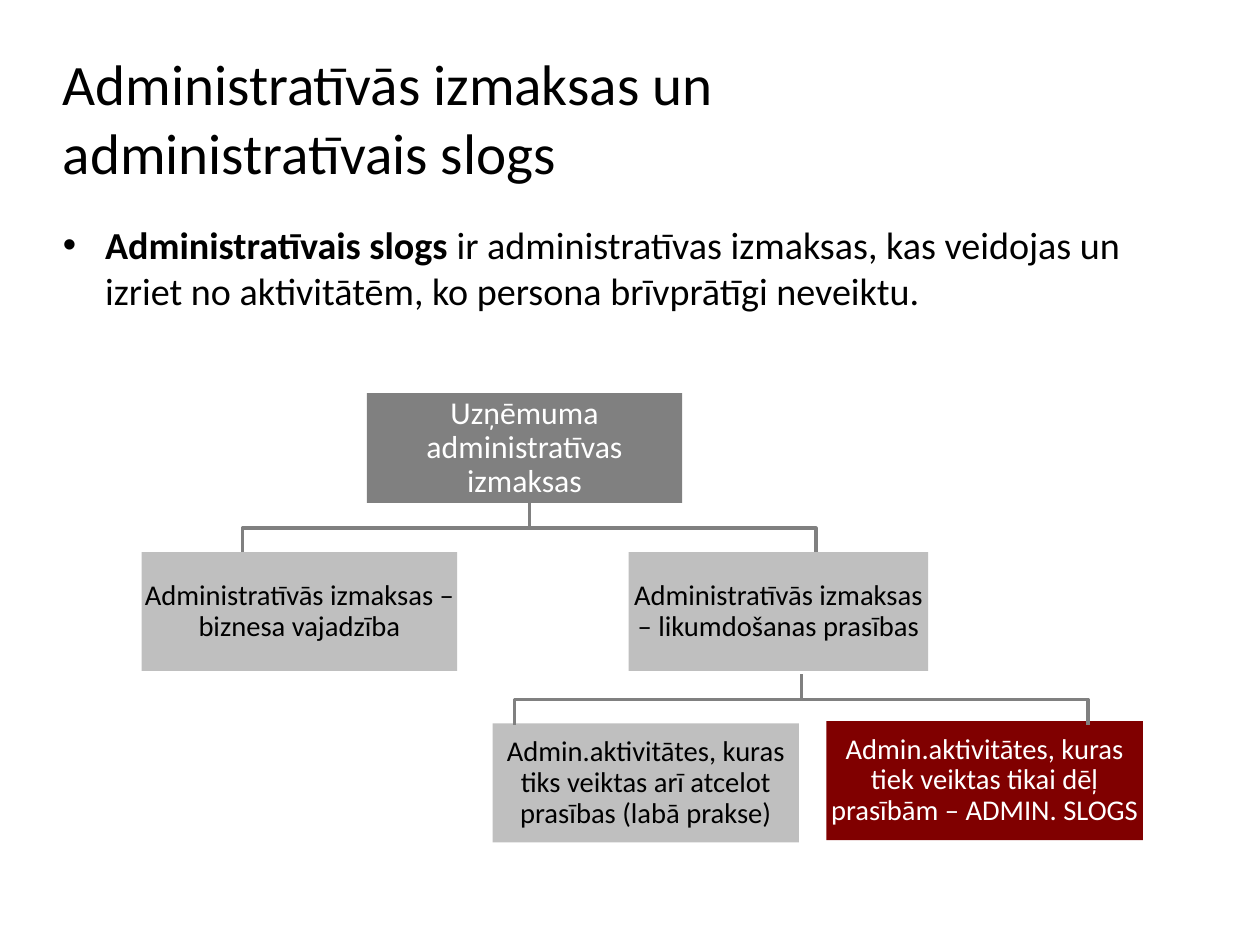
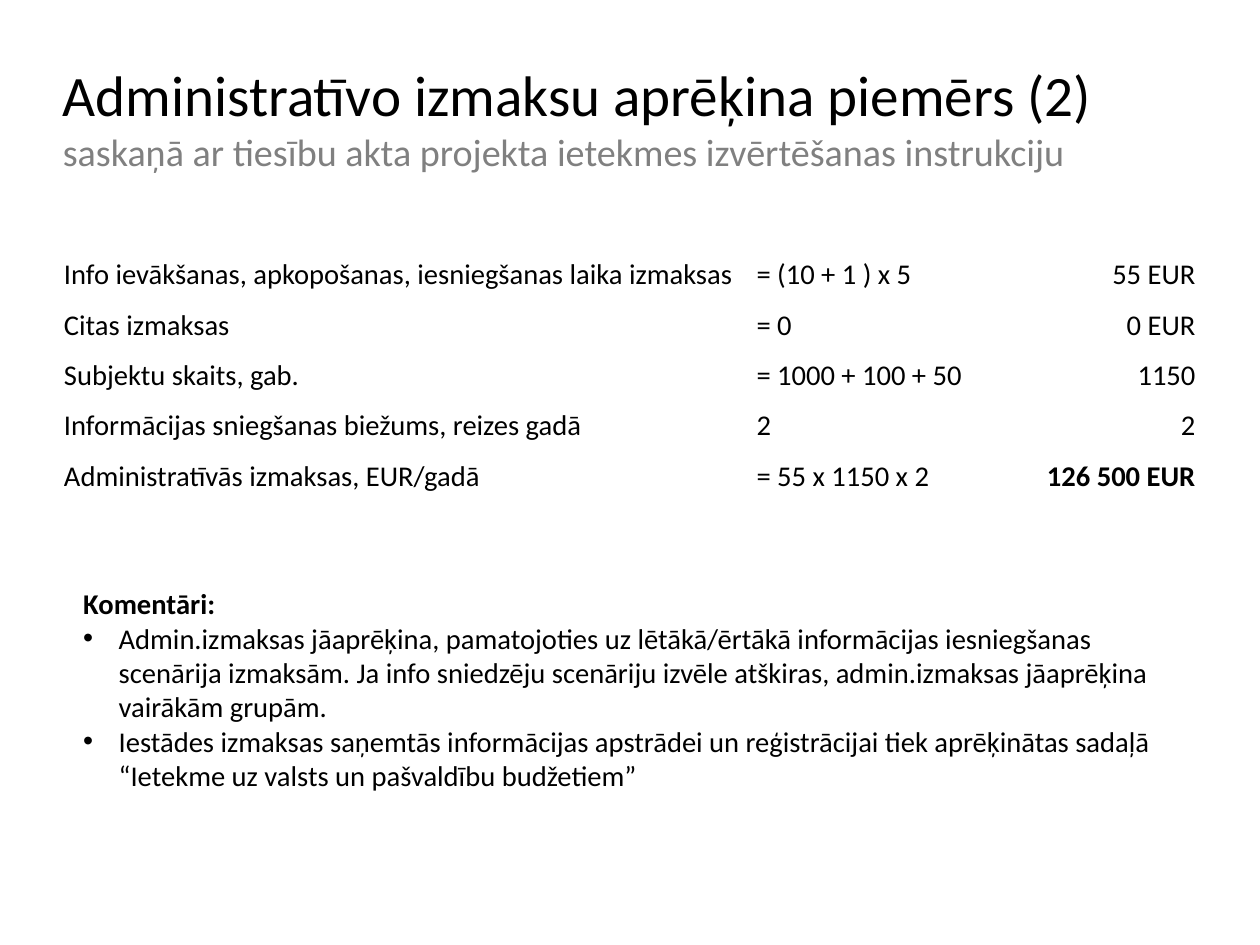
from dataclasses import dataclass

from lxml import etree
from pptx import Presentation
from pptx.dml.color import RGBColor
from pptx.enum.shapes import MSO_SHAPE
from pptx.enum.text import MSO_ANCHOR, PP_ALIGN
from pptx.oxml.ns import qn
from pptx.util import Inches, Pt

RECTANGLE = MSO_SHAPE.RECTANGLE
TOP, MIDDLE, BOTTOM = MSO_ANCHOR.TOP, MSO_ANCHOR.MIDDLE, MSO_ANCHOR.BOTTOM
LEFT, CENTER, RIGHT, JUSTIFY = PP_ALIGN.LEFT, PP_ALIGN.CENTER, PP_ALIGN.RIGHT, PP_ALIGN.JUSTIFY


@dataclass(frozen=True)
class Theme:
    font: str = "Calibri"
    black: str = "000000"
    white: str = "FFFFFF"
    gray: str = "808080"
    light: str = "BFBFBF"
    accent: str = "800000"
    title_size: int = 36
    lead_size: int = 24
    root_size: int = 20
    text_size: int = 18
    line_width: int = 2


THEME = Theme()
TITLE_BOX = (0.55, 0.33, 10.47, 1.38)
BODY_BOX = (0.55, 1.93, 9.92, 5.45)
TABLE_BOX = (0.55, 1.93, 9.92, 2.39)
COMMENT_BOX = (0.63, 5.08, 9.92, 1.92)


def inches(box):
    return [Inches(value) for value in box]


def set_frame(frame, anchor=TOP, margins=(0, 0, 0, 0)):
    sides = ("margin_left", "margin_top", "margin_right", "margin_bottom")
    values = {"word_wrap": True, "vertical_anchor": anchor}
    values.update(zip(sides, inches(margins)))
    for name, value in values.items():
        setattr(frame, name, value)


def set_paragraph(paragraph, spacing=1.0, alignment=LEFT):
    for name, value in {"line_spacing": spacing, "alignment": alignment}.items():
        setattr(paragraph, name, value)


def add_run(paragraph, text, size, color=THEME.black, bold=False):
    run = paragraph.add_run()
    run.text = text
    for name, value in {"name": THEME.font, "size": Pt(size), "bold": bold}.items():
        setattr(run.font, name, value)
    run.font.color.rgb = RGBColor.from_string(color)


def add_bullet(paragraph, indent):
    properties = paragraph._p.get_or_add_pPr()
    properties.set("marL", str(Inches(indent)))
    properties.set("indent", str(-Inches(indent)))
    color = etree.SubElement(properties, qn("a:buClr"))
    etree.SubElement(color, qn("a:srgbClr")).set("val", THEME.black)
    etree.SubElement(properties, qn("a:buFont")).set("typeface", "Arial")
    etree.SubElement(properties, qn("a:buChar")).set("char", "•")


def add_title(slide, lines):
    """Write (text, size, colour) lines, separated by line breaks."""
    frame = slide.shapes.add_textbox(*inches(TITLE_BOX)).text_frame
    set_frame(frame, MIDDLE)
    paragraph = frame.paragraphs[0]
    set_paragraph(paragraph, 1.01)
    for number, (text, size, color) in enumerate(lines):
        if number:
            paragraph.add_line_break()
        add_run(paragraph, text, size, color)


def add_rectangle(slide, box, fill):
    shape = slide.shapes.add_shape(RECTANGLE, *inches(box))
    shape.shadow.inherit = False
    shape.fill.solid()
    shape.fill.fore_color.rgb = RGBColor.from_string(fill)
    shape.line.fill.background()
    return shape


def add_definition(slide, box, term, meaning):
    frame = slide.shapes.add_textbox(*inches(box)).text_frame
    set_frame(frame)
    paragraph = frame.paragraphs[0]
    set_paragraph(paragraph, 1.01)
    add_bullet(paragraph, 0.37)
    add_run(paragraph, term, THEME.lead_size, bold=True)
    add_run(paragraph, meaning, THEME.lead_size)


def add_node(slide, box, text, fill, color, size=THEME.text_size):
    frame = add_rectangle(slide, box, fill).text_frame
    set_frame(frame, MIDDLE, (0.02,) * 4)
    set_paragraph(frame.paragraphs[0], 0.9, CENTER)
    add_run(frame.paragraphs[0], text, size, color)


def add_fork(slide, stem_x, top, reach=2.51, height=0.44):
    """Draw two mirrored branches down from one stem."""
    middle, bottom = top + height / 2, top + height
    for end_x in (stem_x + reach, stem_x - reach):
        builder = slide.shapes.build_freeform(Inches(stem_x), Inches(top))
        corners = [(stem_x, middle), (end_x, middle), (end_x, bottom)]
        builder.add_line_segments([inches(corner) for corner in corners], close=False)
        branch = builder.convert_to_shape()
        branch.shadow.inherit = False
        branch.fill.background()
        branch.line.color.rgb = RGBColor.from_string(THEME.gray)
        branch.line.width = Pt(THEME.line_width)


def add_cost_tree(slide):
    add_fork(slide, 4.63, 4.4)
    add_node(slide, (3.21, 3.44, 2.76, 0.96), "Uzņēmuma administratīvas izmaksas",
             THEME.gray, THEME.white, THEME.root_size)
    nodes = [
        ((1.24, 4.83, 2.76, 1.04), "Administratīvās izmaksas – biznesa vajadzība",
         THEME.light, THEME.black),
        ((4.31, 6.33, 2.68, 1.04),
         "Admin.aktivitātes, kuras tiks veiktas arī atcelot prasības (labā prakse)",
         THEME.light, THEME.black),
        ((7.23, 6.31, 2.77, 1.04),
         "Admin.aktivitātes, kuras tiek veiktas tikai dēļ prasībām – ADMIN. SLOGS",
         THEME.accent, THEME.white),
        ((5.5, 4.83, 2.62, 1.04), "Administratīvās izmaksas – likumdošanas prasības",
         THEME.light, THEME.black),
    ]
    for node in nodes:
        add_node(slide, *node)
    add_fork(slide, 7.01, 5.9)


def set_cell(cell, text, alignment, bold):
    for side, margin in {"left": 0.01, "top": 0.01, "right": 0.01, "bottom": 0}.items():
        setattr(cell, f"margin_{side}", Inches(margin))
    cell.vertical_anchor = BOTTOM
    cell.fill.background()
    paragraph = cell.text_frame.paragraphs[0]
    set_paragraph(paragraph, 1.4, alignment)
    add_run(paragraph, text, THEME.text_size, bold=bold)


def add_calculation(slide, box, rows):
    """Add the table; its last cell is the bold total."""
    table = slide.shapes.add_table(len(rows), 3, *inches(box)).table
    table.first_row = table.horz_banding = False
    for column, width in zip(table.columns, (6.06, 1.97, 1.89)):
        column.width = Inches(width)
    for number, (row, texts) in enumerate(zip(table.rows, rows)):
        row.height = Inches(0.44 if number else 0.63)
        for cell, text, alignment in zip(row.cells, texts, (LEFT, JUSTIFY, RIGHT)):
            set_cell(cell, text, alignment, text == rows[-1][-1])


def add_comments(slide, box, heading, comments):
    frame = add_rectangle(slide, box, THEME.white).text_frame
    set_frame(frame, TOP, (0.1, 0.05, 0.1, 0.05))
    set_paragraph(frame.paragraphs[0])
    add_run(frame.paragraphs[0], heading, THEME.text_size, bold=True)
    for comment in comments:
        paragraph = frame.add_paragraph()
        set_paragraph(paragraph)
        add_bullet(paragraph, 0.31)
        add_run(paragraph, comment, THEME.text_size)


def build_burden_slide(slide):
    add_title(slide, [
        ("Administratīvās izmaksas un", THEME.title_size, THEME.black),
        ("administratīvais slogs", THEME.title_size, THEME.black),
    ])
    add_definition(slide, BODY_BOX, "Administratīvais slogs ",
                   "ir administratīvas izmaksas, kas veidojas un izriet no aktivitātēm, "
                   "ko persona brīvprātīgi neveiktu.")
    add_cost_tree(slide)


def build_example_slide(slide):
    add_title(slide, [
        ("Administratīvo izmaksu aprēķina piemērs (2)", THEME.title_size, THEME.black),
        ("saskaņā ar tiesību akta projekta ietekmes izvērtēšanas instrukciju",
         THEME.lead_size, THEME.gray),
    ])
    add_calculation(slide, TABLE_BOX, [
        ("Info ievākšanas, apkopošanas, iesniegšanas laika izmaksas", "= (10 + 1 ) x 5", "55 EUR"),
        ("Citas izmaksas", "= 0", "0 EUR"),
        ("Subjektu skaits, gab.", "= 1000 + 100 + 50", "1150"),
        ("Informācijas sniegšanas biežums, reizes gadā", "2", "2"),
        ("Administratīvās izmaksas, EUR/gadā", "= 55 x 1150 x 2", "126 500 EUR"),
    ])
    add_comments(slide, COMMENT_BOX, "Komentāri:", [
        "Admin.izmaksas jāaprēķina, pamatojoties uz lētākā/ērtākā informācijas iesniegšanas "
        "scenārija izmaksām. Ja info sniedzēju scenāriju izvēle atškiras, admin.izmaksas "
        "jāaprēķina vairākām grupām.",
        "Iestādes izmaksas saņemtās informācijas apstrādei un reģistrācijai tiek aprēķinātas "
        "sadaļā “Ietekme uz valsts un pašvaldību budžetiem”",
    ])


def main():
    presentation = Presentation()
    presentation.slide_width = Pt(793.75)
    presentation.slide_height = Pt(595.25)
    blank = presentation.slide_layouts[6]
    for build in (build_burden_slide, build_example_slide):
        build(presentation.slides.add_slide(blank))
    presentation.save("out.pptx")


if __name__ == "__main__":
    main()
